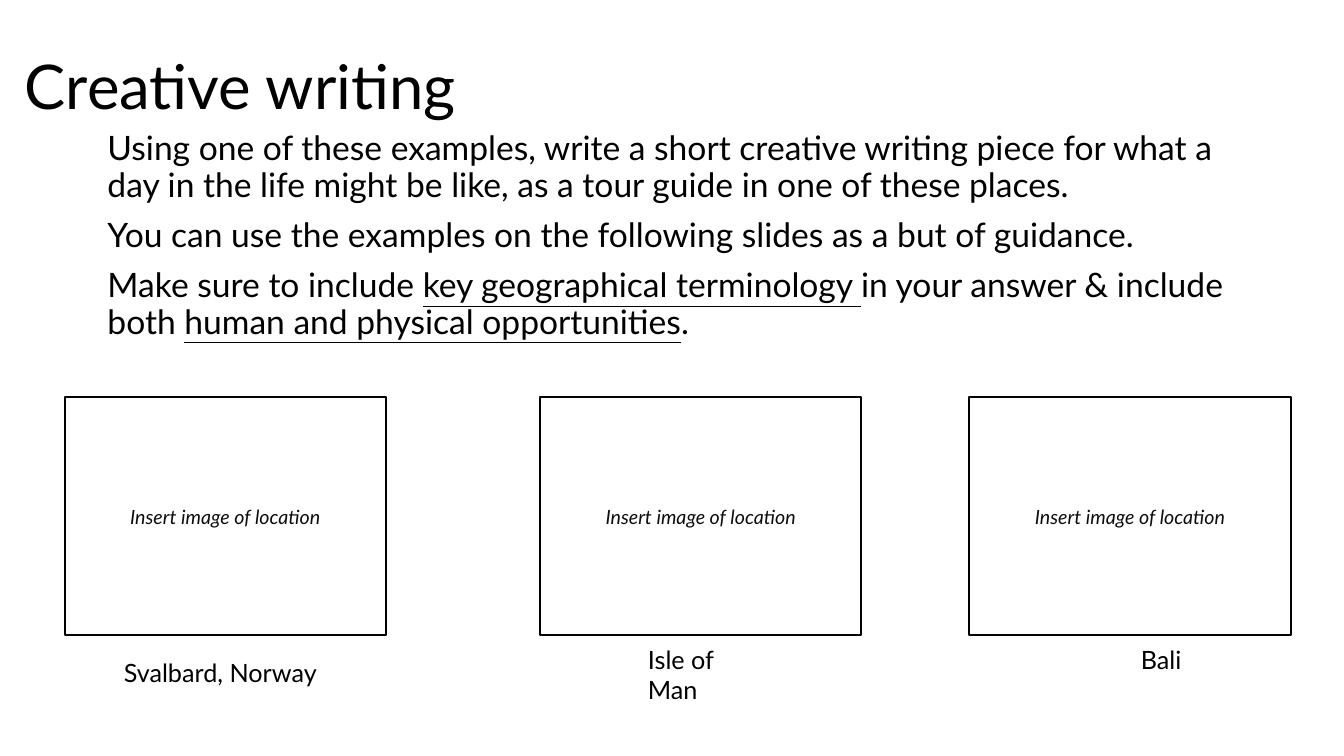
from pptx import Presentation
from pptx.dml.color import RGBColor
from pptx.enum.shapes import MSO_SHAPE
from pptx.enum.text import MSO_ANCHOR, PP_ALIGN
from pptx.util import Cm, Pt

RECT = MSO_SHAPE.RECTANGLE
TOP, MIDDLE = MSO_ANCHOR.TOP, MSO_ANCHOR.MIDDLE
CENTER = PP_ALIGN.CENTER


def color(value):
    return RGBColor.from_string(value)


class Deck:
    font = "Lato"
    ink = "000000"
    hint = "0D0D0D"
    paper = "FFFFFF"

    def __init__(self, width, height):
        self.prs = Presentation()
        self.prs.slide_width, self.prs.slide_height = Cm(width), Cm(height)
        self.slide = self.prs.slides.add_slide(self.prs.slide_layouts[6])

    def style(self, r, size, ink, italic=False):
        r.font.name, r.font.size, r.font.italic = self.font, Pt(size), italic
        r.font.color.rgb = color(ink)

    def text(self, box, paragraphs, size, anchor=TOP, spacing=1.0, before=0):
        tf = self.slide.shapes.add_textbox(*map(Cm, box)).text_frame
        tf.word_wrap, tf.vertical_anchor = True, anchor
        for i, runs in enumerate(paragraphs):
            p = tf.add_paragraph() if i else tf.paragraphs[0]
            p.line_spacing, p.space_before = spacing, Pt(before)
            for words, underline in runs:
                r = p.add_run()
                r.text = words
                self.style(r, size, self.ink)
                r.font.underline = underline

    def frame(self, box, words):
        sp = self.slide.shapes.add_shape(RECT, *map(Cm, box))
        sp.shadow.inherit = False
        sp.fill.solid()
        sp.fill.fore_color.rgb = color(self.paper)
        sp.line.color.rgb = color(self.ink)
        sp.line.width = Pt(1.5)
        tf = sp.text_frame
        tf.text, tf.vertical_anchor = words, MIDDLE
        p = tf.paragraphs[0]
        p.alignment = CENTER
        self.style(p.runs[0], 14, self.hint, italic=True)


TASK = [
    [("Using one of these examples, write a short creative writing piece for "
      "what a day in the life might be like, as a tour guide in one of these "
      "places.", False)],
    [("You can use the examples on the following slides as a but of guidance.",
      False)],
    [("Make sure to include ", False),
     ("key geographical terminology ", True),
     ("in your answer & include both ", False),
     ("human and physical opportunities", True),
     (".", False)],
]

PLACES = [
    ("Svalbard, Norway", 1.63, (2.87, 16.43, 5.4, 1.02)),
    ("Isle of Man", 13.61, (16.08, 16.1, 3.5, 1.02)),
    ("Bali", 24.43, (28.5, 16.1, 1.6, 1.02)),
]


def main():
    deck = Deck(33.87, 19.05)
    deck.text((0.38, 0.41, 29.21, 3.68), [[("Creative writing", False)]], 44,
              anchor=MIDDLE, spacing=0.9)
    deck.text((2.46, 3.2, 29.21, 12.09), TASK, 24, spacing=0.9, before=10)
    for place, left, caption in PLACES:
        deck.text(caption, [[(place, False)]], 18)
        deck.frame((left, 10.01, 8.1, 6), "Insert image of location")
    deck.prs.save("out.pptx")


if __name__ == "__main__":
    main()
